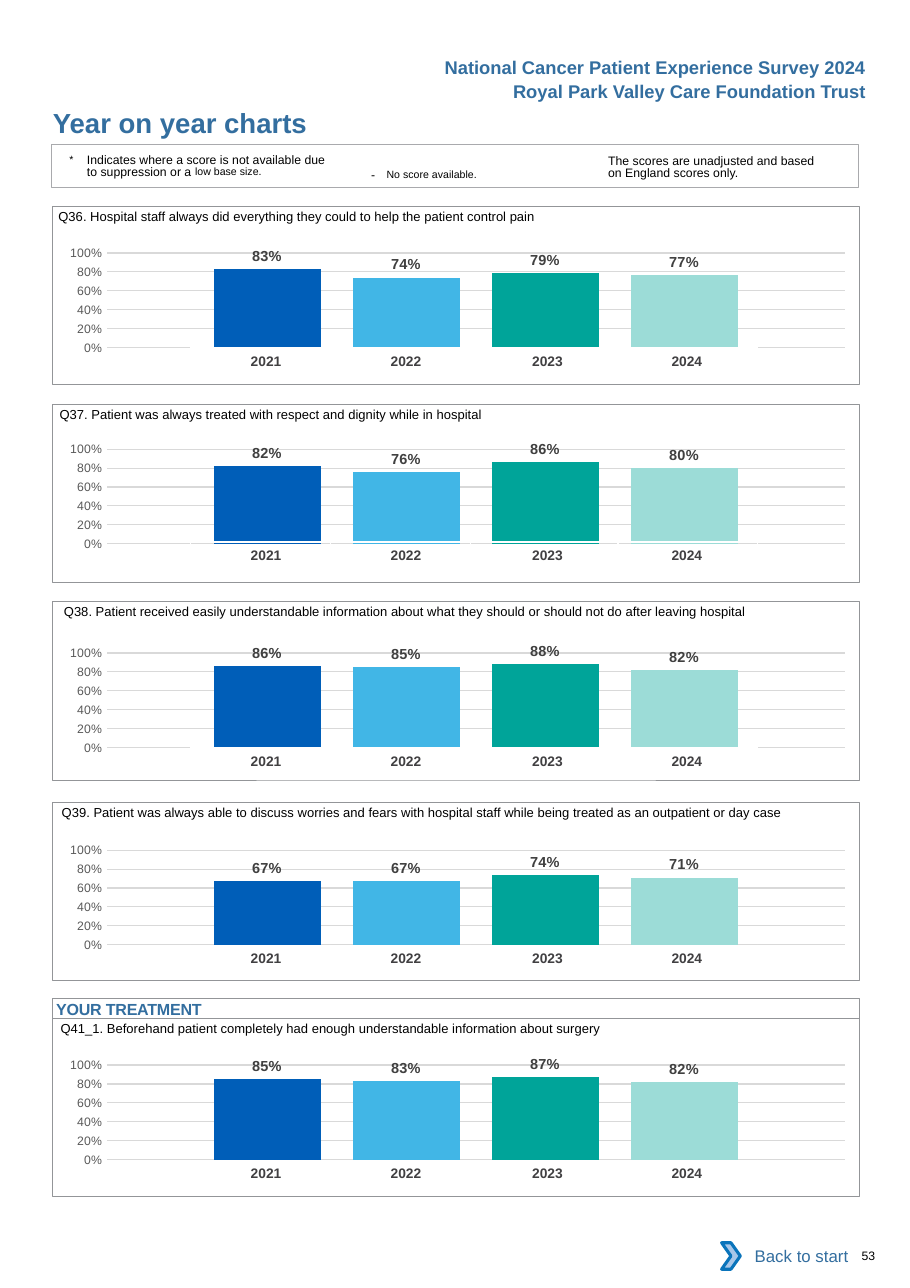
from dataclasses import dataclass

from lxml import etree
from pptx import Presentation
from pptx.chart.data import CategoryChartData
from pptx.dml.color import RGBColor
from pptx.enum.chart import XL_CHART_TYPE as ChartType
from pptx.enum.chart import XL_LABEL_POSITION as LabelPosition
from pptx.enum.chart import XL_TICK_MARK as TickMark
from pptx.enum.shapes import MSO_SHAPE as ShapeKind
from pptx.enum.text import MSO_ANCHOR as Anchor
from pptx.enum.text import PP_ALIGN as Align
from pptx.oxml.ns import qn
from pptx.util import Inches, Pt

BLUE = "336E9F"
BLACK = "000000"
PANEL_LINE = "939598"
PANEL_LEFT, PANEL_WIDTH, PANEL_HEIGHT = 0.48, 7.32, 1.62
YEARS = ("2021", "2022", "2023", "2024")
YEAR_COLORS = ("005EB8", "41B6E6", "00A499", "9CDCD7")
YEAR_WIDTHS = (1.27, 1.27, 1.34, 1.27)
YEAR_RIGHT_MARGINS = (0, 0, 0.04, 0.12)
PLOT_LAYOUT = {"x": 0.079, "y": 0.145, "w": 0.915, "h": 0.666}


@dataclass
class Question:
    text: str
    text_left: float
    panel_top: float
    chart_top: float
    years_top: float
    scores: tuple


QUESTIONS = (
    Question("Q36. Hospital staff always did everything they could to help the patient control pain",
             0.53, 1.87, 2.11, 3.16, (0.83, 0.74, 0.79, 0.77)),
    Question("Q37. Patient was always treated with respect and dignity while in hospital",
             0.54, 3.67, 3.89, 4.92, (0.82, 0.76, 0.86, 0.80)),
    Question("Q38. Patient received easily understandable information about what they should "
             "or should not do after leaving hospital",
             0.58, 5.46, 5.74, 6.79, (0.86, 0.85, 0.88, 0.82)),
    Question("Q39. Patient was always able to discuss worries and fears with hospital staff "
             "while being treated as an outpatient or day case",
             0.56, 7.28, 7.53, 8.58, (0.67, 0.67, 0.74, 0.71)),
    Question("Q41_1. Beforehand patient completely had enough understandable information about surgery",
             0.55, 9.24, 9.48, 10.53, (0.85, 0.83, 0.87, 0.82)),
)


def color(value):
    return RGBColor.from_string(value)


def set_font(font, size, font_color, bold=False):
    font.name = "Arial"
    font.size = Pt(size)
    font.bold = bold
    font.color.rgb = color(font_color)


def add_run(paragraph, text, size, font_color=BLACK, bold=False, **attributes):
    run = paragraph.add_run()
    run.text = text
    set_font(run.font, size, font_color, bold)
    for name, value in attributes.items():
        run.font._element.set(name, str(value))


def set_margins(target, left=0, top=0, right=0, bottom=0):
    target.margin_left, target.margin_top = Inches(left), Inches(top)
    target.margin_right, target.margin_bottom = Inches(right), Inches(bottom)


def add_text(slide, box, margins=(0, 0, 0, 0), align=Align.LEFT):
    frame = slide.shapes.add_textbox(*map(Inches, box)).text_frame
    frame.word_wrap = True
    set_margins(frame, *margins)
    paragraph = frame.paragraphs[0]
    paragraph.alignment = align
    return paragraph


def add_box(slide, kind, box, fill=None, line=None, line_width=0.5):
    shape = slide.shapes.add_shape(kind, *map(Inches, box))
    shape.shadow.inherit = False
    if fill:
        shape.fill.solid()
        shape.fill.fore_color.rgb = color(fill)
    else:
        shape.fill.background()
    if line:
        shape.line.color.rgb = color(line)
        shape.line.width = Pt(line_width)
    else:
        shape.line.fill.background()
    return shape


def set_plot_layout(chart):
    plot_area = chart._chartSpace.chart.plotArea
    for old_layout in plot_area.findall(qn("c:layout")):
        plot_area.remove(old_layout)
    layout = etree.Element(qn("c:layout"))
    manual = etree.SubElement(layout, qn("c:manualLayout"))
    settings = {"layoutTarget": "inner", "xMode": "edge", "yMode": "edge", **PLOT_LAYOUT}
    for name, value in settings.items():
        etree.SubElement(manual, qn(f"c:{name}")).set("val", str(value))
    plot_area.insert(0, layout)


def style_value_axis(axis):
    axis.minimum_scale, axis.maximum_scale, axis.major_unit = 0, 1, 0.2
    axis.major_tick_mark = axis.minor_tick_mark = TickMark.NONE
    axis.format.line.fill.background()
    axis.major_gridlines.format.line.color.rgb = color("D9D9D9")
    axis.major_gridlines.format.line.width = Pt(0.75)
    axis.tick_labels.number_format = "0%"
    axis.tick_labels.number_format_is_linked = False
    set_font(axis.tick_labels.font, 8, "595959")


def add_score_chart(slide, top, scores):
    data = CategoryChartData(number_format="0%")
    data.categories = ["1"]
    for number, score in enumerate(scores, 1):
        data.add_series(f"Series {number}", [score])
    box = map(Inches, (0.39, top, 7.32, 1.29))
    chart = slide.shapes.add_chart(ChartType.COLUMN_CLUSTERED, *box, data).chart
    chart.has_legend = chart.has_title = False
    chart.font.name, chart.font.size = "Calibri", Pt(10)
    chart.font.color.rgb = color(BLACK)
    chart.category_axis.visible = False
    style_value_axis(chart.value_axis)
    plot = chart.plots[0]
    plot.gap_width, plot.overlap, plot.vary_by_categories = 200, -30, False
    for series, fill in zip(plot.series, YEAR_COLORS):
        series.format.fill.solid()
        series.format.fill.fore_color.rgb = color(fill)
        labels = series.data_labels
        labels.show_value = True
        labels.position = LabelPosition.OUTSIDE_END
        labels.number_format, labels.number_format_is_linked = "0%", False
        set_font(labels.font, 9.5, "404040", True)
    set_plot_layout(chart)


def add_year_table(slide, top):
    box = map(Inches, (1.73, top, sum(YEAR_WIDTHS), 0.27))
    table = slide.shapes.add_table(1, len(YEARS), *box).table
    table.first_row = table.horz_banding = False
    for index, year in enumerate(YEARS):
        table.columns[index].width = Inches(YEAR_WIDTHS[index])
        cell = table.cell(0, index)
        cell.fill.background()
        set_margins(cell, 0.1, 0.05, YEAR_RIGHT_MARGINS[index], 0.05)
        paragraph = cell.text_frame.paragraphs[0]
        paragraph.alignment = Align.CENTER
        add_run(paragraph, year, 9, "414042", True)


def add_question(slide, question):
    paragraph = add_text(slide, (question.text_left, question.panel_top - 0.07, 7.25, 0.24), (0, 0.09, 0, 0))
    add_run(paragraph, question.text, 8.5)
    add_score_chart(slide, question.chart_top, question.scores)
    add_year_table(slide, question.years_top)
    add_box(slide, ShapeKind.RECTANGLE, (PANEL_LEFT, question.panel_top, PANEL_WIDTH, PANEL_HEIGHT),
            line=PANEL_LINE)


def add_heading(slide):
    for text, top in (("National Cancer Patient Experience Survey 2024", 0.46),
                      ("Royal Park Valley Care Foundation Trust", 0.68)):
        paragraph = add_text(slide, (3.6, top, 4.36, 0.3), (0.1, 0.05, 0.1, 0.05), Align.RIGHT)
        add_run(paragraph, text, 12, BLUE, True)
    add_run(add_text(slide, (0.48, 0.96, 4.5, 0.3)), "Year on year charts", 18, BLUE, True)


def add_key(slide):
    add_box(slide, ShapeKind.RECTANGLE, (0.47, 1.31, 7.32, 0.39), line="A9AAAD", line_width=0.75)
    suppressed = add_text(slide, (0.63, 1.38, 2.4, 0.27), (0, 0.03, 0, 0))
    suppressed.line_spacing = Pt(8.1)
    properties = suppressed._p.get_or_add_pPr()
    properties.set("marL", str(Inches(0.16)))
    properties.set("indent", str(-Inches(0.16)))
    add_run(suppressed, "*\t", 12, baseline=3000)
    add_run(suppressed, "Indicates where a score is not available due to suppression or a ", 8)
    add_run(suppressed, "low base size.", 12, baseline=7000)
    no_score = add_text(slide, (3.27, 1.41, 1.83, 0.24), (0.1, 0.05, 0.1, 0.05))
    add_run(no_score, "- ", 8, spc=260)
    add_run(no_score, "No score available.", 12, baseline=3000)
    unadjusted = add_text(slide, (5.52, 1.38, 1.98, 0.27), (0, 0.03, 0, 0))
    unadjusted.line_spacing = Pt(8.1)
    add_run(unadjusted, "The scores are unadjusted and based on England scores only.", 8)


def add_section_title(slide, text):
    shape = add_box(slide, ShapeKind.RECTANGLE, (PANEL_LEFT, 9.06, PANEL_WIDTH, 0.18), line=PANEL_LINE)
    frame = shape.text_frame
    frame.vertical_anchor = Anchor.TOP
    set_margins(frame, 0.03, 0.01)
    frame.paragraphs[0].alignment = Align.LEFT
    add_run(frame.paragraphs[0], text, 10.5, BLUE, True, spc=-10)


def add_footer(slide):
    button = add_box(slide, ShapeKind.RECTANGLE, (6.62, 11.19, 1.18, 0.42), fill="FFFFFF")
    button.text_frame.vertical_anchor = Anchor.MIDDLE
    paragraph = button.text_frame.paragraphs[0]
    paragraph.alignment = Align.RIGHT
    add_run(paragraph, "Back to start", 11, BLUE)
    add_box(slide, ShapeKind.CHEVRON, (6.55, 11.28, 0.17, 0.24), "A8C7E9", "0A74BB", 2)
    add_run(add_text(slide, (7.82, 11.33, 0.41, 0.13)), "53", 8)


def main():
    presentation = Presentation()
    presentation.slide_width, presentation.slide_height = Inches(8.26), Inches(11.69)
    slide = presentation.slides.add_slide(presentation.slide_layouts[6])
    add_heading(slide)
    add_key(slide)
    add_section_title(slide, "YOUR TREATMENT")
    for question in QUESTIONS:
        add_question(slide, question)
    add_footer(slide)
    presentation.save("out.pptx")


if __name__ == "__main__":
    main()
